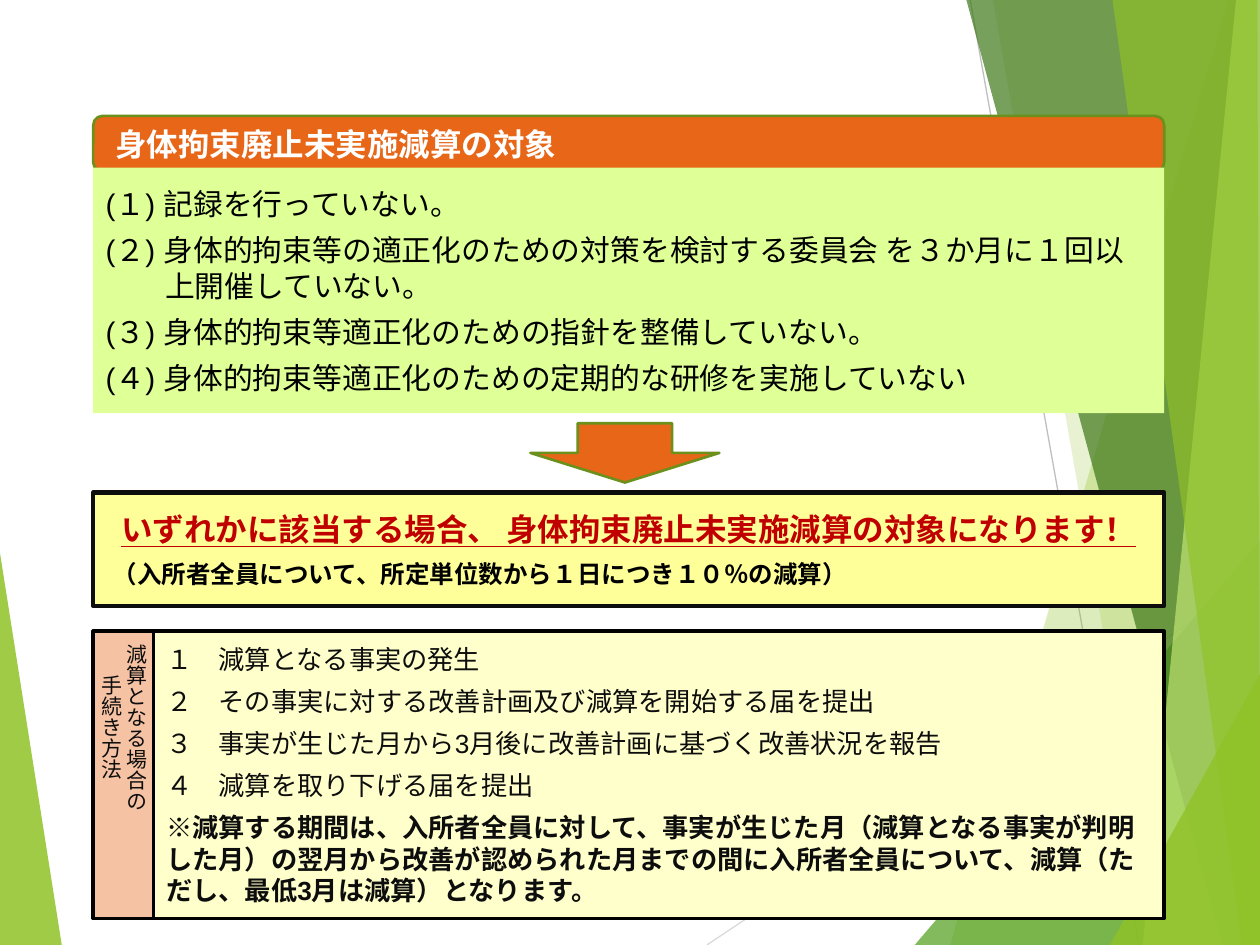
from lxml import etree
from pptx import Presentation
from pptx.dml.color import RGBColor
from pptx.enum.shapes import MSO_CONNECTOR, MSO_SHAPE
from pptx.enum.text import MSO_ANCHOR, PP_ALIGN
from pptx.oxml.ns import qn
from pptx.util import Inches, Pt

RECTANGLE = MSO_SHAPE.RECTANGLE
ROUNDED = MSO_SHAPE.ROUNDED_RECTANGLE
DOWN_ARROW = MSO_SHAPE.DOWN_ARROW
STRAIGHT = MSO_CONNECTOR.STRAIGHT
MIDDLE = MSO_ANCHOR.MIDDLE
LEFT, CENTER = PP_ALIGN.LEFT, PP_ALIGN.CENTER

WHITE = RGBColor(0xFF, 0xFF, 0xFF)
BLACK = RGBColor(0x00, 0x00, 0x00)
INK = RGBColor(0x0D, 0x0D, 0x0D)
RED = RGBColor(0xC0, 0x00, 0x00)
ORANGE = RGBColor(0xE7, 0x66, 0x18)
OLIVE = RGBColor(0x6B, 0x90, 0x1C)
LIME = RGBColor(0xDF, 0xFF, 0x97)
YELLOW = RGBColor(0xFF, 0xFF, 0x99)
CREAM = RGBColor(0xFF, 0xFF, 0xCC)
PEACH = RGBColor(0xF5, 0xC2, 0xA3)
LEAF = RGBColor(0x90, 0xC2, 0x26)
GREEN = RGBColor(0x54, 0xA0, 0x21)
FOREST = RGBColor(0x3F, 0x78, 0x19)
PALE_LEAF = RGBColor(0xC0, 0xE4, 0x74)
LIGHT_GRAY = RGBColor(0xD9, 0xD9, 0xD9)
GRAY = RGBColor(0xBF, 0xBF, 0xBF)

SLIDE_WIDTH, SLIDE_HEIGHT = Inches(10), Inches(7.5)
COLUMN, ROW = SLIDE_WIDTH / 100, SLIDE_HEIGHT / 75

BACKDROP_LINES = [
    ((56.1, 75), (100, 45.7), LIGHT_GRAY),
    ((77, 0), (90.4, 75), GRAY),
]
BACKDROP_FACETS = [
    ([(0, 43.9), (4.9, 75), (0, 75)], LEAF, 85),
    ([(97.5, 0), (75.4, 75), (100, 75), (100, 0)], LEAF, 30),
    ([(78.8, 0), (91.9, 75), (100, 75), (100, 0)], LEAF, 20),
    ([(72.6, 75), (100, 42.9), (100, 75)], GREEN, 72),
    ([(76.7, 0), (97, 75), (100, 75), (100, 0)], FOREST, 70),
    ([(98.1, 0), (90.7, 75), (100, 75), (100, 0)], PALE_LEAF, 70),
    ([(88.3, 0), (98.6, 75), (100, 75), (99.8, 0)], LEAF, 65),
    ([(88.1, 75), (100, 53.5), (100, 75)], LEAF, 80),
]


def grid_box(left, top, width, height):
    return [round(n) for n in (left * COLUMN, top * ROW, width * COLUMN, height * ROW)]


def grid_point(column, row):
    return round(column * COLUMN), round(row * ROW)


def paint(shape, fill, line=None, weight=0):
    shape.shadow.inherit = False
    shape.fill.solid()
    shape.fill.fore_color.rgb = fill
    if line is None:
        shape.line.fill.background()
    else:
        shape.line.color.rgb = line
        shape.line.width = Pt(weight)


def add_panel(slide, box, fill, line=None, weight=0, kind=RECTANGLE):
    shape = slide.shapes.add_shape(kind, *grid_box(*box))
    paint(shape, fill, line, weight)
    frame = shape.text_frame
    frame.word_wrap = True
    frame.vertical_anchor = MIDDLE
    return shape


def write_text(shape, text, size=15, font="Arial", color=INK, bold=False,
               underline=False, align=LEFT, before=0, after=0, left=0, hanging=0):
    frame = shape.text_frame
    paragraph = frame.paragraphs[0]
    if paragraph.runs:
        paragraph = frame.add_paragraph()
    paragraph.alignment = align
    paragraph.space_before, paragraph.space_after = Pt(before), Pt(after)
    properties = paragraph._p.get_or_add_pPr()
    properties.set("marL", str(Pt(left + hanging)))
    properties.set("indent", str(-Pt(hanging)))
    run = paragraph.add_run()
    run.text = text
    run.font.size, run.font.name = Pt(size), font
    run.font.color.rgb = color
    run.font.bold, run.font.underline = bold, underline


def add_backdrop(slide):
    for start, end, color in BACKDROP_LINES:
        connector = slide.shapes.add_connector(STRAIGHT, *grid_point(*start), *grid_point(*end))
        connector.line.color.rgb = color
        connector.line.width = Pt(0.75)
        etree.SubElement(connector._element.spPr, qn("a:effectLst"))
    for points, color, opacity in BACKDROP_FACETS:
        corners = [grid_point(*point) for point in points]
        builder = slide.shapes.build_freeform(*corners[0])
        builder.add_line_segments(corners[1:], close=True)
        facet = builder.convert_to_shape()
        paint(facet, color)
        color_element = facet._element.spPr.find(qn("a:solidFill"))[0]
        etree.SubElement(color_element, qn("a:alpha")).set("val", str(opacity * 1000))


def add_conditions(slide, left, top, width, height):
    header_height = height * 0.187
    overlap = 0.3
    header = add_panel(slide, (left, top, width, header_height), ORANGE, OLIVE, 1.5, ROUNDED)
    write_text(header, "身体拘束廃止未実施減算の対象", size=18, font="Cabin",
               color=WHITE, bold=True, left=4)
    body_top = top + header_height - overlap
    body = add_panel(slide, (left, body_top, width, top + height - body_top), LIME)
    for text in [
        "(１) 記録を行っていない。",
        "(２) 身体的拘束等の適正化のための対策を検討する委員会 を３か月に１回以上開催していない。",
        "(３) 身体的拘束等適正化のための指針を整備していない。",
        "(４) 身体的拘束等適正化のための定期的な研修を実施していない",
    ]:
        write_text(body, text, size=17, color=BLACK, before=6, hanging=34)


def add_result(slide, *box):
    result = add_panel(slide, box, YELLOW, INK, 2.5)
    write_text(result, "いずれかに該当する場合、 身体拘束廃止未実施減算の対象になります！",
               size=18, font="Cabin", color=RED, bold=True, underline=True,
               align=CENTER, after=6)
    write_text(result, "（入所者全員について、所定単位数から１日につき１０％の減算）",
               size=14, color=BLACK, bold=True, left=4)


def add_procedure(slide, left, top, width, height):
    label_width = 4.8
    steps = add_panel(slide, (left + label_width, top, width - label_width, height),
                      CREAM, BLACK, 2)
    for text in [
        "１　減算となる事実の発生",
        "２　その事実に対する改善計画及び減算を開始する届を提出",
        "３　事実が生じた月から3月後に改善計画に基づく改善状況を報告",
        "４　減算を取り下げる届を提出",
    ]:
        write_text(steps, text, after=6)
    write_text(steps, "※減算する期間は、入所者全員に対して、事実が生じた月（減算となる事実が判明した月）"
               "の翌月から改善が認められた月までの間に入所者全員について、減算"
               "（ただし、最低3月は減算）となります。", bold=True)
    label = add_panel(slide, (left, top, label_width, height), PEACH, BLACK, 2)
    label.text_frame._txBody.bodyPr.set("vert", "eaVert")
    for text in ["減算となる場合の", "手続き方法"]:
        write_text(label, text, size=12, font="Cabin", align=CENTER)


def main():
    presentation = Presentation()
    presentation.slide_width, presentation.slide_height = SLIDE_WIDTH, SLIDE_HEIGHT
    slide = presentation.slides.add_slide(presentation.slide_layouts[6])
    left, width = 7.4, 85
    add_backdrop(slide)
    add_conditions(slide, left, 9.2, width, 23.6)
    add_result(slide, left, 39.1, width, 9)
    add_panel(slide, (42.1, 33.6, 15, 4.7), ORANGE, OLIVE, 1.5, DOWN_ARROW)
    add_procedure(slide, left, 50.1, width, 22.8)
    presentation.save("out.pptx")


if __name__ == "__main__":
    main()
